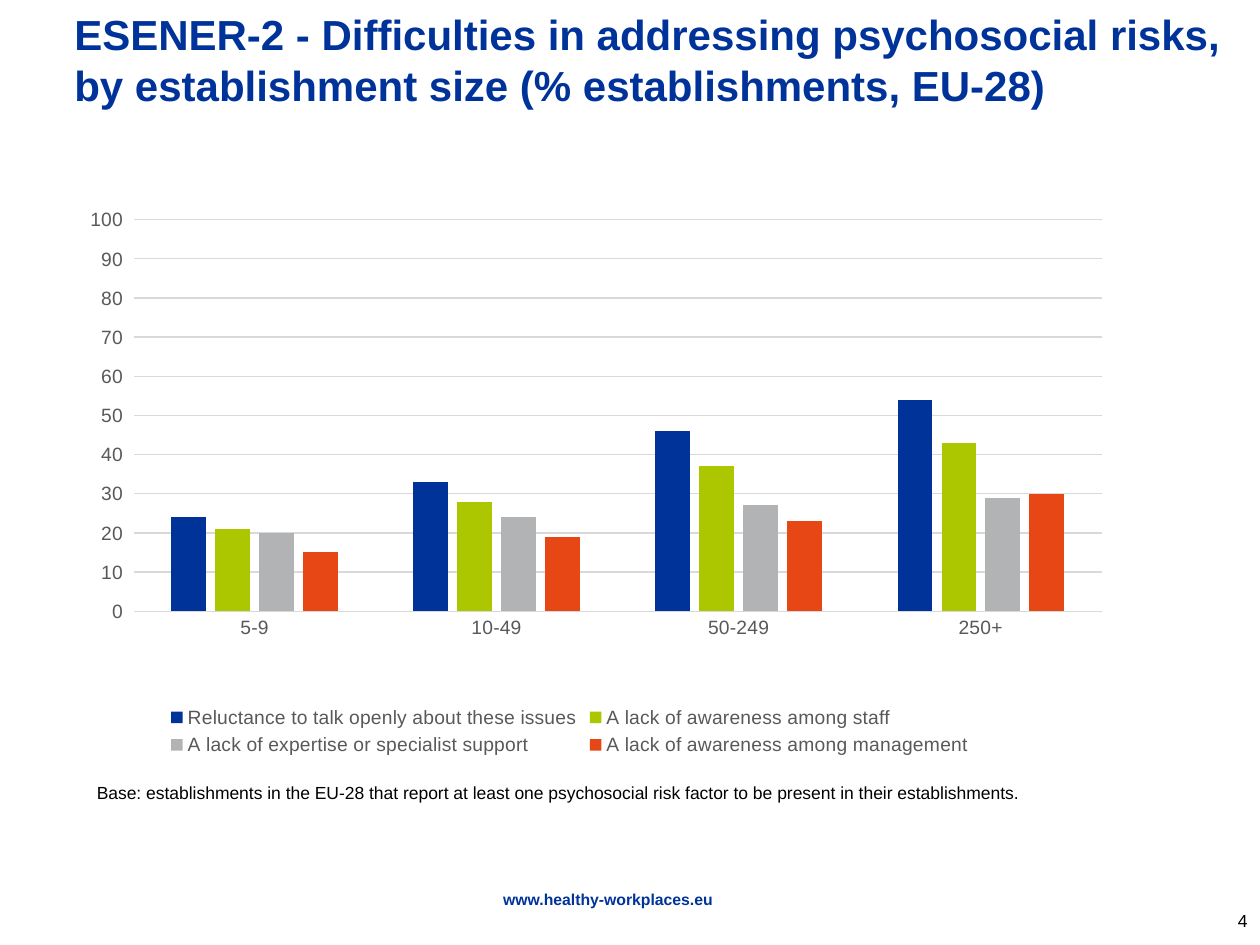
from lxml.etree import SubElement
from pptx import Presentation
from pptx.chart.data import CategoryChartData
from pptx.dml.color import RGBColor
from pptx.enum.chart import XL_CHART_TYPE as ChartType
from pptx.enum.chart import XL_LEGEND_POSITION as LegendPos
from pptx.enum.chart import XL_TICK_MARK as TickMark
from pptx.enum.text import MSO_ANCHOR as Anchor
from pptx.enum.text import MSO_AUTO_SIZE as AutoSize
from pptx.enum.text import PP_ALIGN as Align
from pptx.oxml.ns import qn
from pptx.util import Inches, Pt

FONT = "Arial"
COLORS = {
    "blue": "003399",
    "green": "ACC700",
    "silver": "B1B3B4",
    "orange": "E64715",
    "label": "595959",
    "grid": "D9D9D9",
    "black": "000000",
}
SIZES = ["5-9", "10-49", "50-249", "250+"]
DIFFICULTIES = [
    ("Reluctance to talk openly about these issues", (24, 33, 46, 54), "blue"),
    ("A lack of awareness among staff", (21, 28, 37, 43), "green"),
    ("A lack of expertise or specialist support", (20, 24, 27, 29), "silver"),
    ("A lack of awareness among management", (15, 19, 23, 30), "orange"),
]


def rgb(name):
    return RGBColor.from_string(COLORS[name])


def style_font(font, size, color, bold=False):
    font.name = FONT
    font.size = Pt(size)
    font.bold = bold
    font.color.rgb = rgb(color)


def style_line(line, color):
    line.color.rgb = rgb(color)
    line.width = Pt(0.75)


def write_text(frame, text, size, color, align, bold=False, anchor=Anchor.TOP):
    frame.word_wrap = True
    frame.auto_size = AutoSize.NONE
    frame.vertical_anchor = anchor
    paragraph = frame.paragraphs[0]
    paragraph.text = text
    paragraph.alignment = align
    style_font(paragraph.font, size, color, bold)


def set_title(slide, text):
    title = slide.shapes.title
    title.left, title.top = Inches(0.49), Inches(0.2)
    title.width, title.height = Inches(9.39), Inches(0.54)
    write_text(title.text_frame, text, 24, "blue", Align.LEFT, True, Anchor.MIDDLE)


def add_text(slide, box, text, size, color, align, **options):
    frame = slide.shapes.add_textbox(*map(Inches, box)).text_frame
    write_text(frame, text, size, color, align, **options)
    return frame


def set_plot_layout(chart, x, y, w, h):
    plot_area = chart.plots[0]._element.getparent()
    layout = plot_area.find(qn("c:layout"))
    if layout is None:
        layout = SubElement(plot_area, qn("c:layout"))
        plot_area.insert(0, layout)
    manual = SubElement(layout, qn("c:manualLayout"))
    settings = [("layoutTarget", "inner"), ("xMode", "edge"), ("yMode", "edge"),
                ("x", x), ("y", y), ("w", w), ("h", h)]
    for tag, value in settings:
        SubElement(manual, qn(f"c:{tag}")).set("val", str(value))


def add_difficulty_chart(slide, box):
    data = CategoryChartData()
    data.categories = SIZES
    for name, shares, _ in DIFFICULTIES:
        data.add_series(name, shares)
    chart = slide.shapes.add_chart(
        ChartType.COLUMN_CLUSTERED, *map(Inches, box), data).chart
    chart.has_title = False
    style_font(chart.font, 11, "black")

    # Columns
    plot = chart.plots[0]
    plot.gap_width = 219
    plot.overlap = -27
    plot.vary_by_categories = False
    for series, (_, _, color) in zip(plot.series, DIFFICULTIES):
        series.format.fill.solid()
        series.format.fill.fore_color.rgb = rgb(color)

    # Axes
    for axis in (chart.category_axis, chart.value_axis):
        axis.major_tick_mark = axis.minor_tick_mark = TickMark.NONE
        style_font(axis.tick_labels.font, 11, "label")
    style_line(chart.category_axis.format.line, "grid")
    percent = chart.value_axis
    percent.minimum_scale, percent.maximum_scale, percent.major_unit = 0, 100, 10
    percent.format.line.fill.background()
    percent.tick_labels.number_format = r"#,##0\ "
    percent.tick_labels.number_format_is_linked = False
    style_line(percent.major_gridlines.format.line, "grid")

    # Legend
    chart.has_legend = True
    chart.legend.position = LegendPos.BOTTOM
    chart.legend.include_in_layout = False
    style_font(chart.legend.font, 11, "label")
    set_plot_layout(chart, 0.09, 0.06, 0.91, 0.68)


def main():
    prs = Presentation()
    prs.slide_width, prs.slide_height = Inches(10), Inches(7.5)
    slide = prs.slides.add_slide(prs.slide_layouts[5])

    # Title and chart
    set_title(slide, "ESENER-2 - Difficulties in addressing psychosocial risks, "
                     "by establishment size (% establishments, EU-28)")
    add_difficulty_chart(slide, (0.3, 1.47, 8.45, 4.57))

    # Base note
    add_text(slide, (0.67, 6.16, 8.27, 0.27),
             "Base: establishments in the EU-28 that report at least one psychosocial "
             "risk factor to be present in their establishments.",
             10, "black", Align.JUSTIFY)

    # Footer
    website = add_text(slide, (1.52, 7.08, 6.61, 0.11), "www.healthy-workplaces.eu",
                       9, "blue", Align.CENTER, bold=True)
    website.margin_left = website.margin_right = 0
    website.margin_top = website.margin_bottom = 0
    website.paragraphs[0].line_spacing = 0.9
    add_text(slide, (9.33, 7.11, 0.67, 0.4), "4", 10, "black", Align.RIGHT,
             anchor=Anchor.MIDDLE)

    prs.save("out.pptx")


if __name__ == "__main__":
    main()
